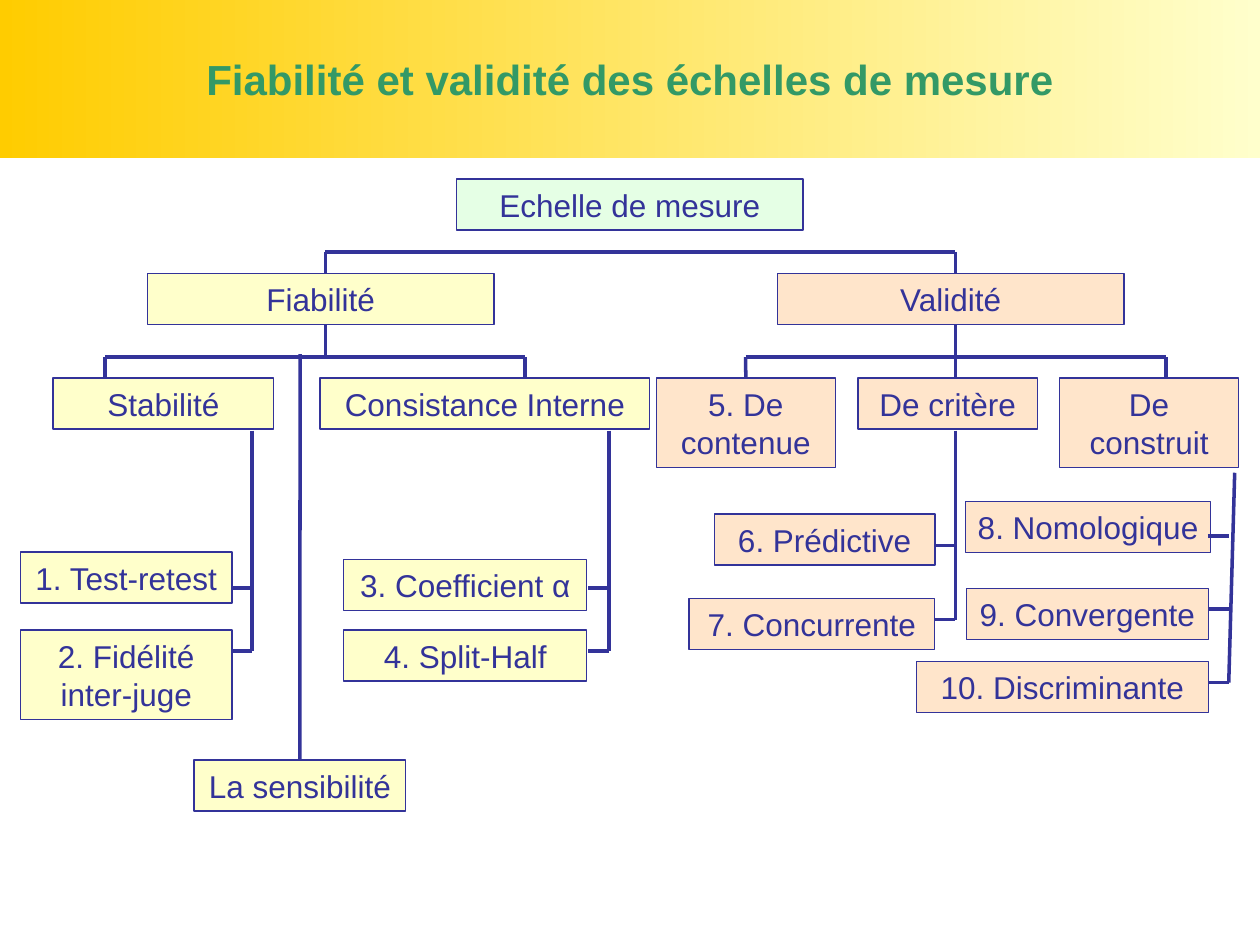
from lxml.etree import SubElement
from pptx import Presentation
from pptx.dml.color import RGBColor
from pptx.enum.shapes import MSO_CONNECTOR, MSO_SHAPE
from pptx.enum.text import MSO_ANCHOR, PP_ALIGN
from pptx.oxml.ns import qn
from pptx.util import Cm, Pt

THEME = {
    "ink": RGBColor.from_string("333399"),
    "title": RGBColor.from_string("339966"),
    "band": [RGBColor.from_string(c) for c in ("FFCC00", "FFFFCC")],
    "root": RGBColor.from_string("CCFFCC"),
    "reliability": RGBColor.from_string("FFFF99"),
    "validity": RGBColor.from_string("FFCC99"),
    "font": "Arial", "title_size": Pt(24), "size": Pt(18),
    "border": Pt(0.75), "link": Pt(2),
}
ONE, TWO = 1.03, 1.8                            # box heights by number of text lines
BAR1, TOP2, END2, BAR2, TOP3, END3 = 5.08, 5.51, 6.56, 7.2, 7.62, 8.68
MID_L, MID_R = 6.56, 19.26                      # axes of the two branches

prs = Presentation()
prs.slide_width, prs.slide_height = Cm(25.4), Cm(19.05)
s = prs.slides.add_slide(prs.slide_layouts[5])


def write(sp, text, size, color, bold=False):
    tf = sp.text_frame
    frame = {"word_wrap": True, "vertical_anchor": MSO_ANCHOR.MIDDLE,
             "margin_left": Cm(0.2), "margin_right": Cm(0.2)}
    for name, value in frame.items():
        setattr(tf, name, value)
    p = tf.paragraphs[0]
    p.alignment = PP_ALIGN.CENTER
    r = p.add_run()
    r.text = text
    for name, value in {"name": THEME["font"], "size": size, "bold": bold}.items():
        setattr(r.font, name, value)
    r.font.color.rgb = color


def link(x1, y1, x2, y2):
    line = s.shapes.add_connector(MSO_CONNECTOR.STRAIGHT, Cm(x1), Cm(y1), Cm(x2), Cm(y2))
    line.line.color.rgb = THEME["ink"]
    line.line.width = THEME["link"]
    SubElement(line._element.spPr, qn("a:effectLst"))
    return line


# Title band
title = s.shapes.title
place = {"left": Cm(0), "top": Cm(0), "width": prs.slide_width, "height": Cm(3.18)}
for name, value in place.items():
    setattr(title, name, value)
title.fill.gradient()
title.fill.gradient_angle = 0
for stop, color, position in zip(title.fill.gradient_stops, THEME["band"], (0, 1)):
    stop.color.rgb = color
    stop.position = position
write(title, "Fiabilité et validité des échelles de mesure",
      THEME["title_size"], THEME["title"], True)

# Boxes: text, left, top, width, height
groups = {
    "root": [("Echelle de mesure", 9.2, 3.61, 6.99, ONE)],
    "reliability": [
        ("Fiabilité", 2.97, TOP2, 6.99, ONE),
        ("Stabilité", 1.07, TOP3, 4.45, ONE),
        ("Consistance Interne", 6.45, TOP3, 6.65, ONE),
        ("1. Test-retest", 0.41, 11.13, 4.27, ONE),
        ("2. Fidélité inter-juge", 0.41, 12.7, 4.27, TWO),
        ("3. Coefficient α", 6.93, 11.28, 4.9, ONE),
        ("4. Split-Half", 6.93, 12.7, 4.9, ONE),
        ("La sensibilité", 3.91, 15.32, 4.27, ONE),
    ],
    "validity": [
        ("Validité", 15.67, TOP2, 6.99, ONE),
        ("5. De contenue", 13.23, TOP3, 3.61, TWO),
        ("De critère", 17.3, TOP3, 3.61, ONE),
        ("De construit", 21.36, TOP3, 3.61, TWO),
        ("6. Prédictive", 14.4, 10.36, 4.45, ONE),
        ("7. Concurrente", 13.89, 12.07, 4.95, ONE),
        ("8. Nomologique", 19.46, 10.11, 4.95, ONE),
        ("9. Convergente", 19.48, 11.86, 4.88, ONE),
        ("10. Discriminante", 18.47, 13.34, 5.89, ONE),
    ],
}
boxes = {}
for group, items in groups.items():
    for text, *rect in items:
        sp = s.shapes.add_shape(MSO_SHAPE.RECTANGLE, *map(Cm, rect))
        sp.shadow.inherit = False
        sp.fill.solid()
        sp.fill.fore_color.rgb = THEME[group]
        rgb = sp._element.spPr.find(qn("a:solidFill"))[0]
        SubElement(rgb, qn("a:alpha"), val="50000")
        sp.line.color.rgb = THEME["ink"]
        sp.line.width = THEME["border"]
        write(sp, text, THEME["size"], THEME["ink"])
        boxes[text] = sp

# Horizontal bars with a drop to each child
bars = [(BAR1, TOP2, (MID_L, MID_R)),
        (BAR2, TOP3, (2.12, 10.58)),
        (BAR2, TOP3, (15.03, MID_R, 23.5))]
for y, bottom, xs in bars:
    link(xs[0], y, xs[-1], y)
    for x in xs:
        drop = link(x, y, x, bottom)
        if x == 15.03:
            drop.end_connect(boxes["5. De contenue"], 0)
for x in (MID_L, MID_R):
    link(x, END2, x, BAR2)

# Side spines with a short stub to each leaf: top x, top y, bottom x, stub heights
spines = [(5.08, END3, 5.08, (11.85, 13.12)),
          (12.28, END3, 12.28, (11.85, 13.12)),
          (MID_R, END3, MID_R, (11, 12.49)),
          (24.89, 9.53, 24.77, (10.8, 12.28, 13.76))]
for x_top, top, x, stubs in spines:
    link(x_top, top, x, stubs[-1])
    for y in stubs:
        link(x - 0.42, y, x, y)

# Long drop to the sensitivity box
link(6.05, 7.14, 6.05, 15.32).end_connect(boxes["La sensibilité"], 0)

prs.save("out.pptx")
